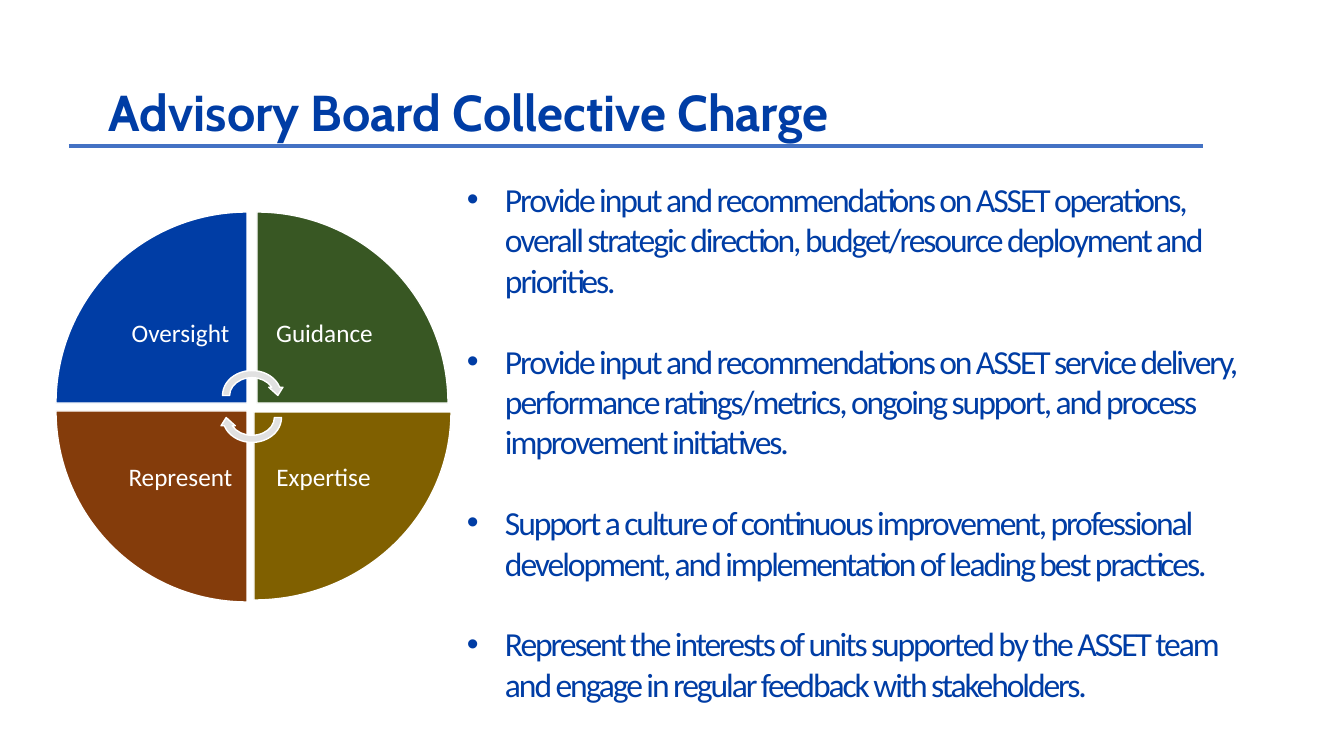
from lxml import etree
from pptx import Presentation
from pptx import util as u
from pptx.dml.color import RGBColor
from pptx.enum import shapes, text
from pptx.oxml.ns import qn

PX = 914400 / 100.8
COLORS = {
    "blue": "003DA5",
    "rule": "4472C4",
    "green": "385723",
    "gold": "806000",
    "brown": "843C0B",
    "arrow": "E1E1E1",
    "white": "FFFFFF",
}
CHARGES = [
    "Provide input and recommendations on ASSET operations, overall strategic "
    "direction, budget/resource deployment and priorities.",
    "Provide input and recommendations on ASSET service delivery, performance "
    "ratings/metrics, ongoing support, and process improvement initiatives.",
    "Support a culture of continuous improvement, professional development, "
    "and implementation of leading best practices.",
    "Represent the interests of units supported by the ASSET team and engage "
    "in regular feedback with stakeholders.",
]
# label, colour, rotation, wedge box, label box
QUADRANTS = [
    ("Oversight", "blue", 0, (56, 212, 191, 191), (113, 267, 135, 135)),
    ("Guidance", "green", 90, (257, 212, 191, 191), (257, 267, 135, 135)),
    ("Expertise", "gold", 180, (254, 412, 197, 188), (254, 412, 139, 132)),
    ("Represent", "brown", 270, (56, 411, 191, 191), (113, 411, 135, 135)),
]
# rotation, box
CYCLE_ARROWS = [(0, (219, 367, 66, 57)), (180, (219, 389, 66, 57))]


def px(*lengths):
    return [u.Emu(round(length * PX)) for length in lengths]


def color(name):
    return RGBColor.from_string(COLORS[name])


def apply(target, values):
    for name, value in values.items():
        setattr(target, name, value)


def add_text(slide, box, lines, font, fill, frame=None, layout=None):
    """Add a wrapped text box with one paragraph per line; return its paragraphs."""
    text_frame = slide.shapes.add_textbox(*px(*box)).text_frame
    apply(text_frame, {"word_wrap": True, **(frame or {})})
    text_frame.text = "\n".join(lines)
    for paragraph in text_frame.paragraphs:
        apply(paragraph, layout or {})
        run = paragraph.runs[0]
        apply(run.font, font)
        run.font.color.rgb = color(fill)
    return text_frame.paragraphs


def margins(size):
    inset, = px(size)
    return {f"margin_{side}": inset for side in ("left", "top", "right", "bottom")}


def add_bullet(paragraph, indent):
    properties = paragraph._p.get_or_add_pPr()
    properties.set("marL", str(indent))
    properties.set("indent", str(-indent))
    etree.SubElement(properties, qn("a:buFont")).set("typeface", "Arial")
    etree.SubElement(properties, qn("a:buChar")).set("char", "•")


def add_charges(slide):
    font = {"name": "Calibri", "size": u.Pt(24)}
    paragraphs = add_text(slide, (467, 179, 788, 570), CHARGES, font, "blue",
                          margins(0), {"space_after": u.Pt(29)})
    indent, = px(38)
    for paragraph in paragraphs:
        add_bullet(paragraph, indent)
        paragraph.runs[0].font._element.set("spc", "-150")


def add_rule(slide, start_x, end_x, y):
    line = slide.shapes.add_connector(shapes.MSO_CONNECTOR.STRAIGHT,
                                      *px(start_x, y, end_x, y))
    line.line.color.rgb = color("rule")
    line.line.width = u.Pt(3)
    etree.SubElement(line._element.spPr, qn("a:effectLst"))


def add_outlined_shape(slide, kind, box, fill, rotation):
    shape = slide.shapes.add_shape(kind, *px(*box))
    shape.rotation = rotation
    shape.shadow.inherit = False
    shape.fill.solid()
    shape.fill.fore_color.rgb = color(fill)
    shape.line.color.rgb = color("white")
    shape.line.width = u.Pt(1)


def add_wheel(slide):
    font = {"name": "Calibri", "size": u.Pt(18)}
    frame = {"vertical_anchor": text.MSO_ANCHOR.MIDDLE, **margins(14)}
    layout = {"alignment": text.PP_ALIGN.CENTER, "line_spacing": 0.9}
    for label, fill, rotation, wedge_box, label_box in QUADRANTS:
        add_outlined_shape(slide, shapes.MSO_SHAPE.PIE_WEDGE, wedge_box, fill, rotation)
        add_text(slide, label_box, [label], font, "white", frame, layout)
    for rotation, box in CYCLE_ARROWS:
        add_outlined_shape(slide, shapes.MSO_SHAPE.CIRCULAR_ARROW, box, "arrow", rotation)


def main():
    presentation = Presentation()
    presentation.slide_width, presentation.slide_height = px(1344, 756)
    slide = presentation.slides.add_slide(presentation.slide_layouts[6])
    add_charges(slide)
    add_text(slide, (99, 76, 1054, 72), ["Advisory Board Collective Charge"],
             {"name": "Cabin", "size": u.Pt(36), "bold": True}, "blue")
    add_rule(slide, 69, 1203, 146)
    add_wheel(slide)
    presentation.save("out.pptx")


if __name__ == "__main__":
    main()
